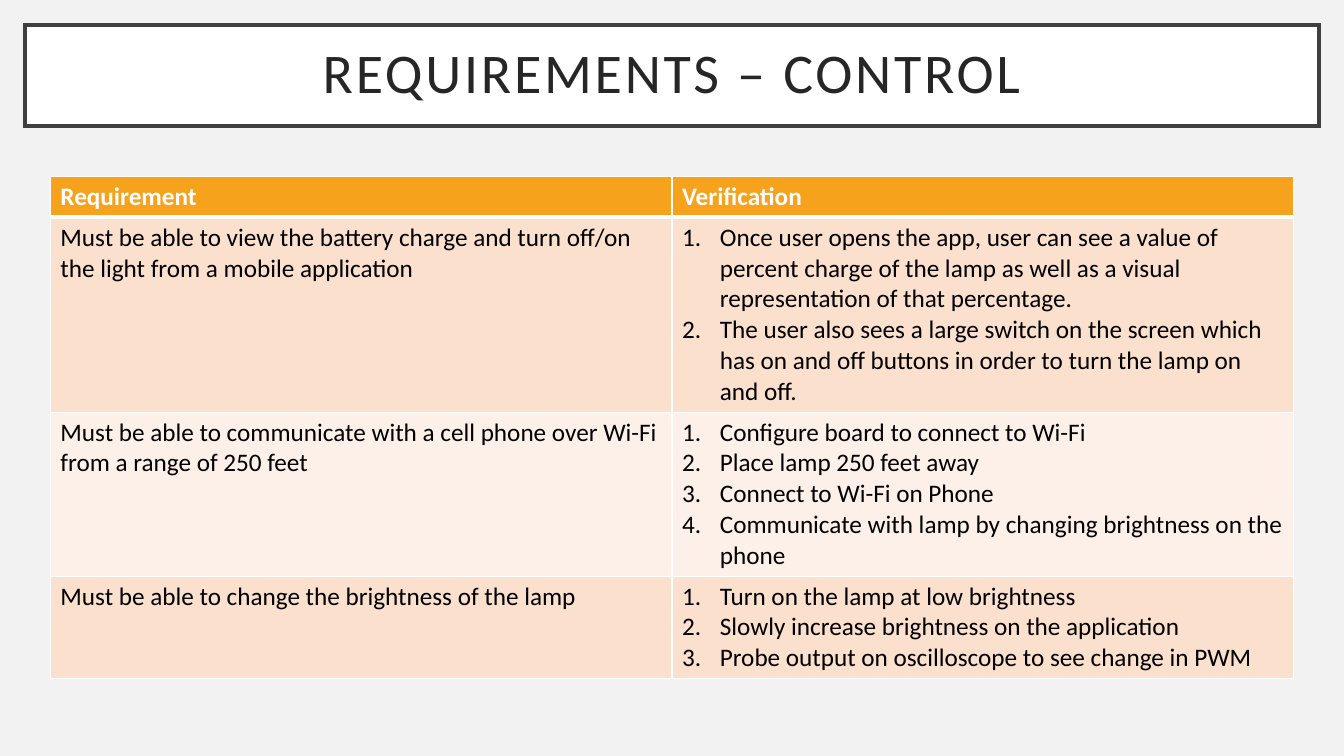
from dataclasses import dataclass

from lxml import etree
from pptx import Presentation
from pptx.dml.color import RGBColor
from pptx.enum.shapes import MSO_SHAPE
from pptx.enum.text import MSO_ANCHOR, PP_ALIGN
from pptx.oxml.ns import qn
from pptx.util import Pt

RECT = MSO_SHAPE.RECTANGLE
MIDDLE = MSO_ANCHOR.MIDDLE
CENTER = PP_ALIGN.CENTER

FONT = "Calibri"
WHITE = "FFFFFF"
BLACK = "000000"
ORANGE = "F6A21D"
PEACH = "FBE0CD"
CREAM = "FDF0E8"
LINE = 22
PAD = 7.2
INDENT = 27


@dataclass
class Demand:
    need: str
    steps: list[str]
    lines: int


DEMANDS = [
    Demand(
        "Must be able to view the battery charge and turn off/on the light from a mobile application",
        [
            "Once user opens the app, user can see a value of percent charge of the lamp "
            "as well as a visual representation of that percentage.",
            "The user also sees a large switch on the screen which has on and off buttons "
            "in order to turn the lamp on and off.",
        ],
        6,
    ),
    Demand(
        "Must be able to communicate with a cell phone over Wi-Fi from a range of 250 feet",
        [
            "Configure board to connect to Wi-Fi",
            "Place lamp 250 feet away",
            "Connect to Wi-Fi on Phone",
            "Communicate with lamp by changing brightness on the phone",
        ],
        5,
    ),
    Demand(
        "Must be able to change the brightness of the lamp",
        [
            "Turn on the lamp at low brightness",
            "Slowly increase brightness on the application",
            "Probe output on oscilloscope to see change in PWM",
        ],
        3,
    ),
]


def paint(target, color: str) -> None:
    target.rgb = RGBColor.from_string(color)


def add_run(para, text: str, size: float, color: str, bold: bool = False):
    run = para.add_run()
    run.text = text
    run.font.name = FONT
    run.font.size = Pt(size)
    run.font.bold = bold
    paint(run.font.color, color)
    return run


def add_number(para) -> None:
    props = para._p.get_or_add_pPr()
    props.set("marL", str(Pt(INDENT)))
    props.set("indent", str(-Pt(INDENT)))
    etree.SubElement(props, qn("a:buFont"), typeface="+mj-lt")
    etree.SubElement(props, qn("a:buAutoNum"), type="arabicPeriod")


def add_border(cell, base: float) -> None:
    props = cell._tc.get_or_add_tcPr()
    for side, width in (("L", 1), ("R", 1), ("T", 1), ("B", base)):
        edge = etree.SubElement(props, qn(f"a:ln{side}"), w=str(Pt(width)))
        fill = etree.SubElement(edge, qn("a:solidFill"))
        etree.SubElement(fill, qn("a:srgbClr"), val=WHITE)


def fill_cell(cell, texts: list[str], back: str, head: bool = False, listed: bool = False) -> None:
    add_border(cell, 3 if head else 1)
    cell.fill.solid()
    paint(cell.fill.fore_color, back)
    frame = cell.text_frame
    for i, text in enumerate(texts):
        para = frame.add_paragraph() if i else frame.paragraphs[0]
        if listed:
            add_number(para)
        add_run(para, text, 18, WHITE if head else BLACK, head)


def add_title(slide, text: str) -> None:
    box = slide.shapes.add_shape(RECT, Pt(18), Pt(18), Pt(924), Pt(72))
    box.shadow.inherit = False
    box.fill.solid()
    paint(box.fill.fore_color, WHITE)
    paint(box.line.color, "404040")
    box.line.width = Pt(2.5)
    etree.SubElement(box.line._get_or_add_ln(), qn("a:miter"), lim="800000")
    frame = box.text_frame
    frame.word_wrap = True
    frame.vertical_anchor = MIDDLE
    frame.margin_left = frame.margin_right = Pt(14.4)
    frame.margin_top = frame.margin_bottom = Pt(14.4)
    para = frame.paragraphs[0]
    para.alignment = CENTER
    para.line_spacing = 0.9
    run = add_run(para, text, 40, "262626")
    run.font._element.set("spc", "200")


def add_grid(slide, demands: list[Demand]) -> None:
    heights = [LINE + PAD] + [d.lines * LINE + PAD for d in demands]
    frame = slide.shapes.add_table(
        len(heights), 2, Pt(36), Pt(126), Pt(888), Pt(sum(heights))
    )
    table = frame.table
    for row, height in zip(table.rows, heights):
        row.height = Pt(height)
    for col, label in enumerate(("Requirement", "Verification")):
        fill_cell(table.cell(0, col), [label], ORANGE, head=True)
    for row, demand in enumerate(demands, 1):
        back = PEACH if row % 2 else CREAM
        fill_cell(table.cell(row, 0), [demand.need], back)
        fill_cell(table.cell(row, 1), demand.steps, back, listed=True)


def main() -> None:
    deck = Presentation()
    deck.slide_width = Pt(960)
    deck.slide_height = Pt(540)
    slide = deck.slides.add_slide(deck.slide_layouts[6])
    slide.background.fill.solid()
    paint(slide.background.fill.fore_color, "F2F2F2")
    add_grid(slide, DEMANDS)
    add_title(slide, "REQUIREMENTS – CONTROL")
    deck.save("out.pptx")


if __name__ == "__main__":
    main()
